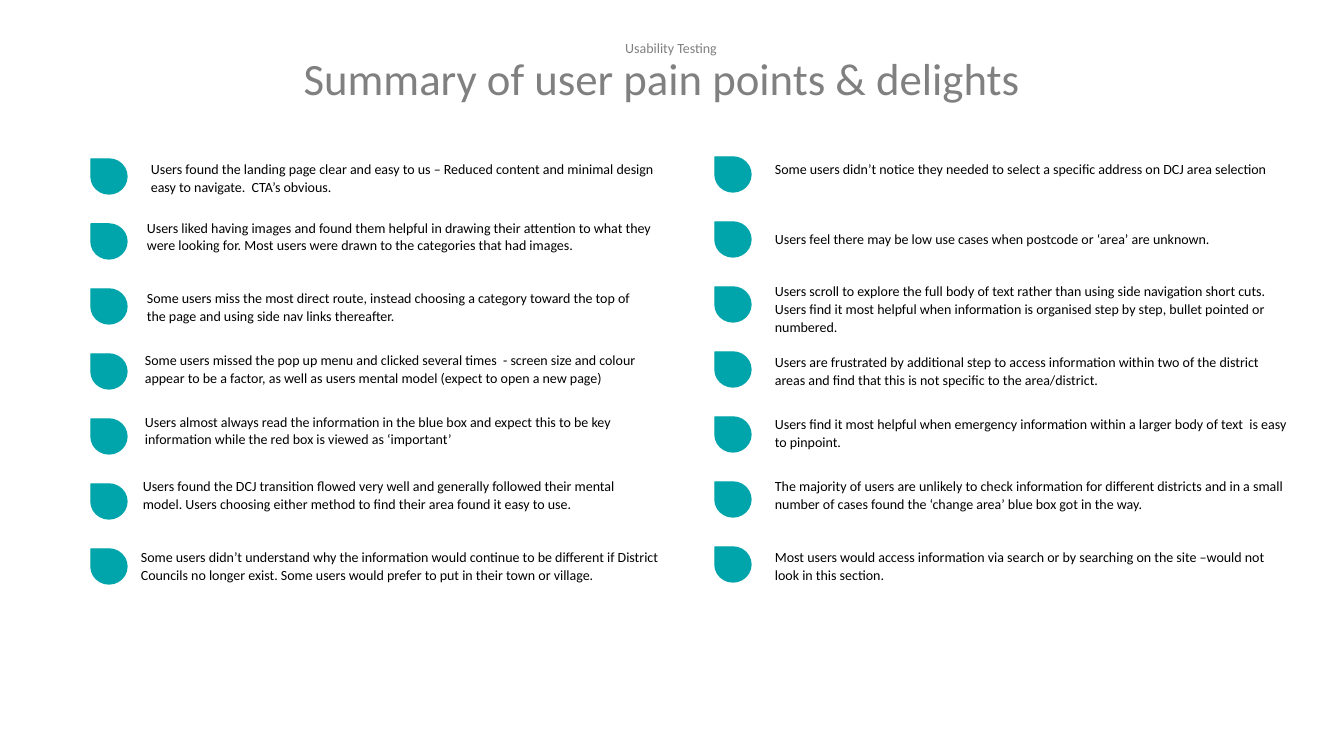
from pptx import Presentation
from pptx.dml.color import RGBColor
from pptx.enum import shapes, text
from pptx import util as u

SCALE = u.Inches(7.5) / 756  # EMU in one px
COLORS = {"teal": "00A5AB", "heading": "808080", "body": "000000"}
FONT = "Calibri"


def px(*lengths):
    return [u.Emu(round(length * SCALE)) for length in lengths]


def add_span(para, words, size, color):
    span = para.add_run()
    span.text = words
    span.font.name = FONT
    span.font.size = u.Pt(size)
    span.font.color.rgb = RGBColor.from_string(COLORS[color])


deck = Presentation()
deck.slide_width, deck.slide_height = px(1344, 756)
page = deck.slides.add_slide(deck.slide_layouts[6])

# Heading: small label above the title
box = page.shapes.add_textbox(*px(93, 0, 1159, 146))
frame = box.text_frame
frame.word_wrap = True
frame.vertical_anchor = text.MSO_ANCHOR.MIDDLE
headings = [("Usability Testing", 10, 3), ("Summary of user pain points & delights", 32, 21)]
for index, (words, size, right_margin) in enumerate(headings):
    para = frame.add_paragraph() if index else frame.paragraphs[0]
    para.alignment = text.PP_ALIGN.CENTER
    para.line_spacing = 0.9
    para._p.get_or_add_pPr().set("marR", str(px(right_margin)[0]))
    add_span(para, words, size, "heading")

# Findings: left, top, width, height, line spacing, wording
left_findings = [
    (141, 154, 549, 45, 1.07, "Users found the landing page clear and easy to us – Reduced content and "
     "minimal design easy to navigate.  CTA’s obvious."),
    (137, 215, 535, 61, 1, "Users liked having images and found them helpful in drawing their attention "
     "to what they were looking for. Most users were drawn to the categories that had images."),
    (137, 283, 521, 45, 1.07, "Some users miss the most direct route, instead choosing a category toward "
     "the top of the page and using side nav links thereafter."),
    (135, 345, 537, 64, 1.07, "Some users missed the pop up menu and clicked several times  - screen size "
     "and colour appear to be a factor, as well as users mental model (expect to open a new page)"),
    (135, 409, 535, 44, 1, "Users almost always read the information in the blue box and expect this to "
     "be key information while the red box is viewed as ‘important’"),
    (133, 471, 514, 64, 1.07, "Users found the DCJ transition flowed very well and generally followed their "
     "mental model. Users choosing either method to find their area found it easy to use."),
    (131, 542, 537, 64, 1.07, "Some users didn’t understand why the information would continue to be "
     "different if District Councils no longer exist. Some users would prefer to put in their town or village."),
]
right_findings = [
    (765, 154, 528, 45, 1.07, "Some users didn’t notice they needed to select a specific address on DCJ "
     "area selection"),
    (765, 224, 521, 27, 1.07, "Users feel there may be low use cases when postcode or ‘area’ are unknown."),
    (765, 276, 537, 93, 1.07, "Users scroll to explore the full body of text rather than using side "
     "navigation short cuts. Users find it most helpful when information is organised step by step, "
     "bullet pointed or numbered."),
    (765, 347, 514, 45, 1.07, "Users are frustrated by additional step to access information within two "
     "of the district areas and find that this is not specific to the area/district."),
    (765, 409, 537, 45, 1.07, "Users find it most helpful when emergency information within a larger body "
     "of text  is easy to pinpoint."),
    (765, 471, 528, 45, 1.07, "The majority of users are unlikely to check information for different "
     "districts and in a small number of cases found the ‘change area’ blue box got in the way."),
    (765, 542, 514, 45, 1.07, "Most users would access information via search or by searching on the site "
     "–would not look in this section."),
]

# Two columns, each finding with a teardrop marker
for marker_left, marker_top, findings in [(91, 159, left_findings), (715, 157, right_findings)]:
    for row, (left, top, width, height, spacing, words) in enumerate(findings):
        marker = page.shapes.add_shape(
            shapes.MSO_SHAPE.TEAR, *px(marker_left, marker_top + 65 * row, 36, 35))
        marker._element.spPr.get_or_add_xfrm().set("flipH", "1")
        marker.shadow.inherit = False
        marker.fill.solid()
        marker.fill.fore_color.rgb = RGBColor.from_string(COLORS["teal"])
        marker.line.color.rgb = RGBColor.from_string(COLORS["teal"])
        marker.line.width = u.Pt(1)

        box = page.shapes.add_textbox(*px(left, top, width, height))
        frame = box.text_frame
        frame.word_wrap = True
        frame.auto_size = text.MSO_AUTO_SIZE.SHAPE_TO_FIT_TEXT
        para = frame.paragraphs[0]
        para.line_spacing = spacing
        if spacing > 1:
            para.space_after = u.Pt(8)
        add_span(para, words, 10, "body")

deck.save("out.pptx")
